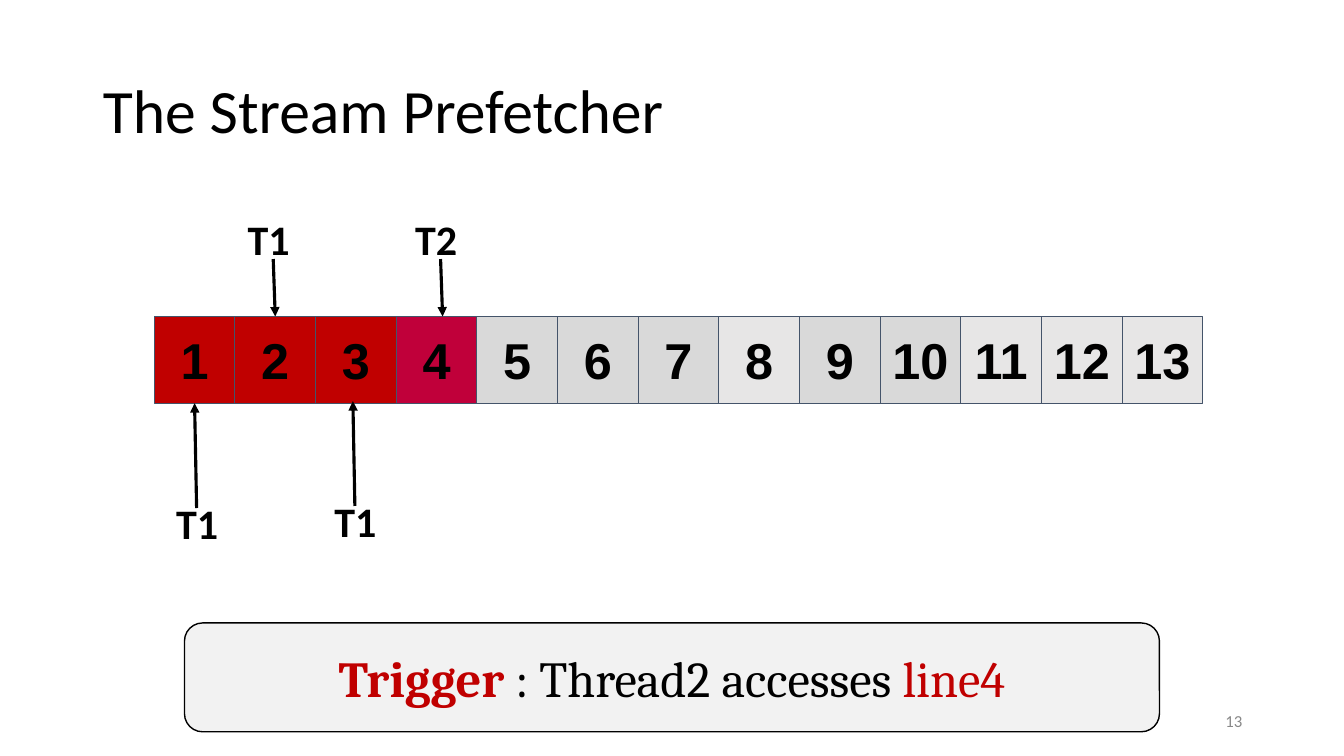
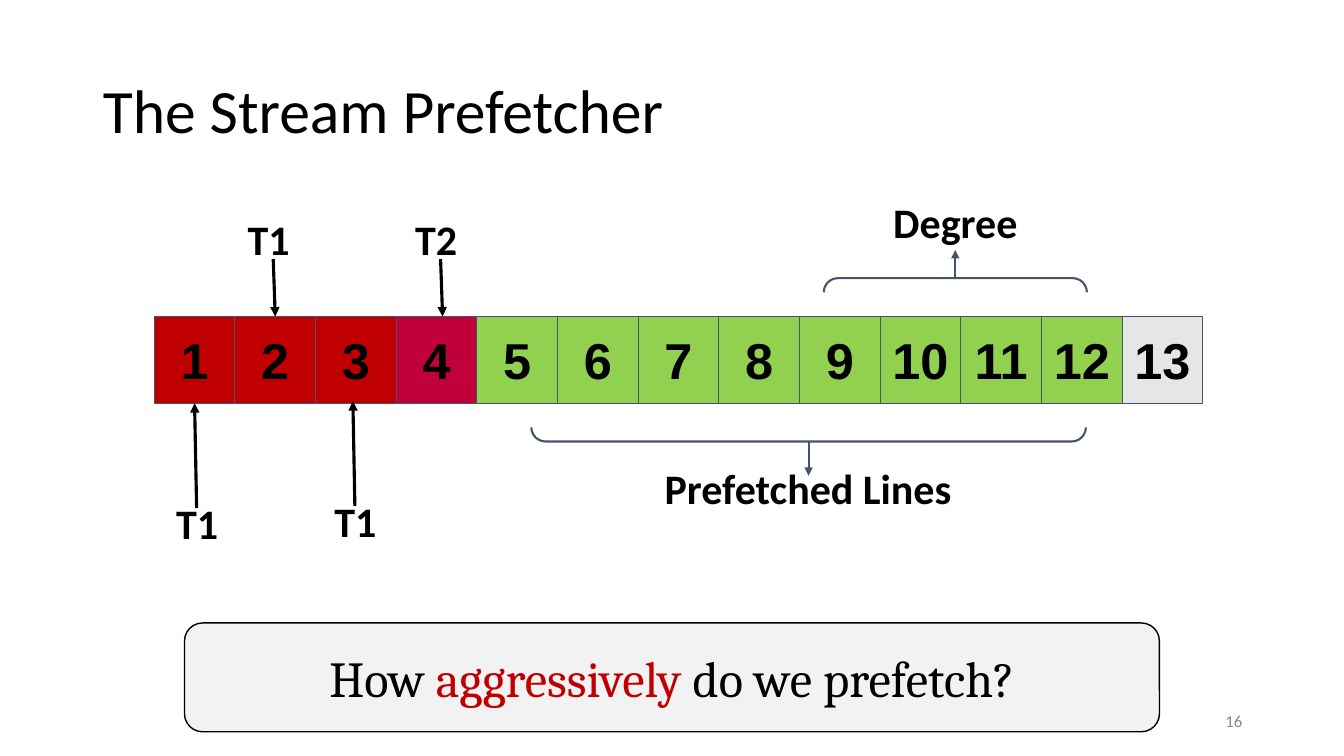
from dataclasses import dataclass

from lxml.etree import SubElement as Sub
from pptx import Presentation
from pptx.dml.color import RGBColor as Color
from pptx.enum.shapes import MSO_CONNECTOR as Link, MSO_SHAPE as Form
from pptx.enum.text import MSO_ANCHOR as Anchor, PP_ALIGN as Align
from pptx.oxml.ns import qn
from pptx.util import Inches, Pt


@dataclass(frozen=True)
class Theme:
    # Colours
    ink: str = "000000"
    red: str = "C00000"
    rose: str = "C0003A"
    green: str = "92D050"
    grey: str = "D9D9D9"
    pale: str = "E7E6E6"
    panel: str = "F2F2F2"
    slate: str = "44546A"
    faint: str = "888888"
    # Fonts
    body: str = "Calibri"
    digit: str = "Arial"
    serif: str = "Cambria"
    # Type sizes
    title: int = 44
    large: int = 36
    label: int = 30
    small: int = 12


class Deck:
    ROW_X, ROW_Y, CELL_W, CELL_H = 1.53, 3.14, 0.8, 0.86

    def __init__(self, theme):
        self.theme = theme
        self.show = Presentation()
        self.show.slide_width = Inches(13.33)
        self.show.slide_height = Inches(7.5)
        self.slide = None

    # Shared helpers
    def style(self, run, size, font, color, bold=False):
        run.font.size = Pt(size)
        run.font.name = font
        run.font.bold = bold
        run.font.color.rgb = Color.from_string(color)

    def frame(self, shape, align, anchor, pad=0.1):
        frame = shape.text_frame
        frame.word_wrap = True
        frame.vertical_anchor = anchor
        frame.margin_left = frame.margin_right = Inches(0.1)
        frame.margin_top = frame.margin_bottom = Inches(pad)
        frame.paragraphs[0].alignment = align
        return frame

    def letter(self, shape, text, align, anchor, size, font, color,
               bold=False, pad=0.1):
        shape.text_frame.text = text
        line = self.frame(shape, align, anchor, pad).paragraphs[0]
        self.style(line.runs[0], size, font, color, bold)
        return line

    def shape(self, form, x, y, w, h, fill, edge, width):
        shape = self.slide.shapes.add_shape(
            form, Inches(x), Inches(y), Inches(w), Inches(h))
        shape.shadow.inherit = False
        if fill:
            shape.fill.solid()
            shape.fill.fore_color.rgb = Color.from_string(fill)
        else:
            shape.fill.background()
        shape.line.color.rgb = Color.from_string(edge)
        shape.line.width = Pt(width)
        return shape

    def text(self, text, x, y, w, h, *look, **more):
        box = self.slide.shapes.add_textbox(
            Inches(x), Inches(y), Inches(w), Inches(h))
        self.letter(box, text, *look, **more)

    # Slide with title and number
    def page(self, title, number):
        t = self.theme
        self.slide = self.show.slides.add_slide(self.show.slide_layouts[5])
        head = self.slide.shapes.title
        head.left, head.top = Inches(0.92), Inches(0.4)
        head.width, head.height = Inches(11.5), Inches(1.45)
        line = self.letter(head, title, Align.LEFT, Anchor.MIDDLE,
                           t.title, t.body, t.ink, pad=0.05)
        line.line_spacing = 0.9
        self.text(str(number), 9.42, 6.95, 3, 0.4, Align.RIGHT,
                  Anchor.MIDDLE, t.small, t.body, t.faint, pad=0.05)

    # Row of numbered cache lines
    def row(self, fills):
        t = self.theme
        for i, fill in enumerate(fills):
            cell = self.shape(Form.RECTANGLE, self.ROW_X + i * self.CELL_W,
                              self.ROW_Y, self.CELL_W, self.CELL_H,
                              fill, t.slate, 0.75)
            self.letter(cell, str(i + 1), Align.CENTER, Anchor.MIDDLE,
                        t.large, t.digit, t.ink, bold=True)

    def label(self, text, x, y, w, h):
        t = self.theme
        self.text(text, x, y, w, h, Align.CENTER, Anchor.TOP,
                  t.label, t.body, t.ink, bold=True)

    def arrow(self, x1, y1, x2, y2, color, width):
        link = self.slide.shapes.add_connector(
            Link.STRAIGHT, Inches(x1), Inches(y1), Inches(x2), Inches(y2))
        link.line.color.rgb = Color.from_string(color)
        link.line.width = Pt(width)
        props = link.element.spPr
        Sub(props.find(qn("a:ln")), qn("a:tailEnd"), type="triangle")
        Sub(props, qn("a:effectLst"))

    # Thread name with an arrow to its cache line
    def thread(self, name, x, y):
        self.label(name, x, y, 1.07, 0.74)
        if y < self.ROW_Y:
            ends = x + 0.58, y + 0.55, x + 0.6, self.ROW_Y
        else:
            ends = x + 0.53, y + 0.2, x + 0.51, y - 0.84
        self.arrow(*ends, self.theme.ink, 2.25)

    # Bracket lying on its side, spine up or down, with a pointer
    def brace(self, x, y, w, tip, up):
        depth, color = 0.14, self.theme.slate
        mid = x + w / 2
        spine = y if up else y + depth
        brace = self.shape(Form.LEFT_BRACKET, mid - depth / 2,
                           y + depth / 2 - w / 2, depth, w, None, color, 1.5)
        brace.adjustments[0] = 1
        brace.rotation = 90 if up else 270
        self.arrow(mid, spine, mid, tip, color, 1.5)

    # Message panel: parts are (text, color, bold)
    def panel(self, parts):
        t = self.theme
        box = self.shape(Form.ROUNDED_RECTANGLE, 1.83, 6.18, 9.67, 1.08,
                         t.panel, t.ink, 1)
        line = self.frame(box, Align.CENTER, Anchor.MIDDLE, 0.05).paragraphs[0]
        for text, color, bold in parts:
            run = line.add_run()
            run.text = text
            self.style(run, t.large, t.serif, color, bold)

    # Everything both slides have
    def stream(self, number, fills, parts):
        t = self.theme
        self.page("The Stream Prefetcher", number)
        self.row([t.red] * 3 + [t.rose] + fills)
        for name, x, y in (("T1", 1.42, 4.84), ("T1", 2.13, 2.02),
                           ("T1", 2.99, 4.82), ("T2", 3.79, 2.02)):
            self.thread(name, x, y)
        self.panel(parts)


def main():
    t = Theme()
    deck = Deck(t)

    # Trigger
    deck.stream(13, [t.grey] * 3 + [t.pale] + [t.grey] * 2 + [t.pale] * 3,
                [("Trigger ", t.red, True),
                 (": Thread2 accesses ", t.ink, False),
                 ("line4", t.red, False)])

    # Prefetch degree
    deck.stream(16, [t.green] * 8 + [t.pale],
                [("How ", t.ink, False),
                 ("aggressively", t.red, False),
                 (" do we prefetch?", t.ink, False)])
    deck.brace(5.27, 4.24, 5.5, 4.72, up=False)
    deck.brace(8.17, 2.76, 2.61, 2.48, up=True)
    deck.label("Degree", 8.58, 1.85, 1.79, 0.63)
    deck.label("Prefetched Lines", 6.13, 4.49, 3.77, 0.48)

    deck.show.save("out.pptx")


if __name__ == "__main__":
    main()
